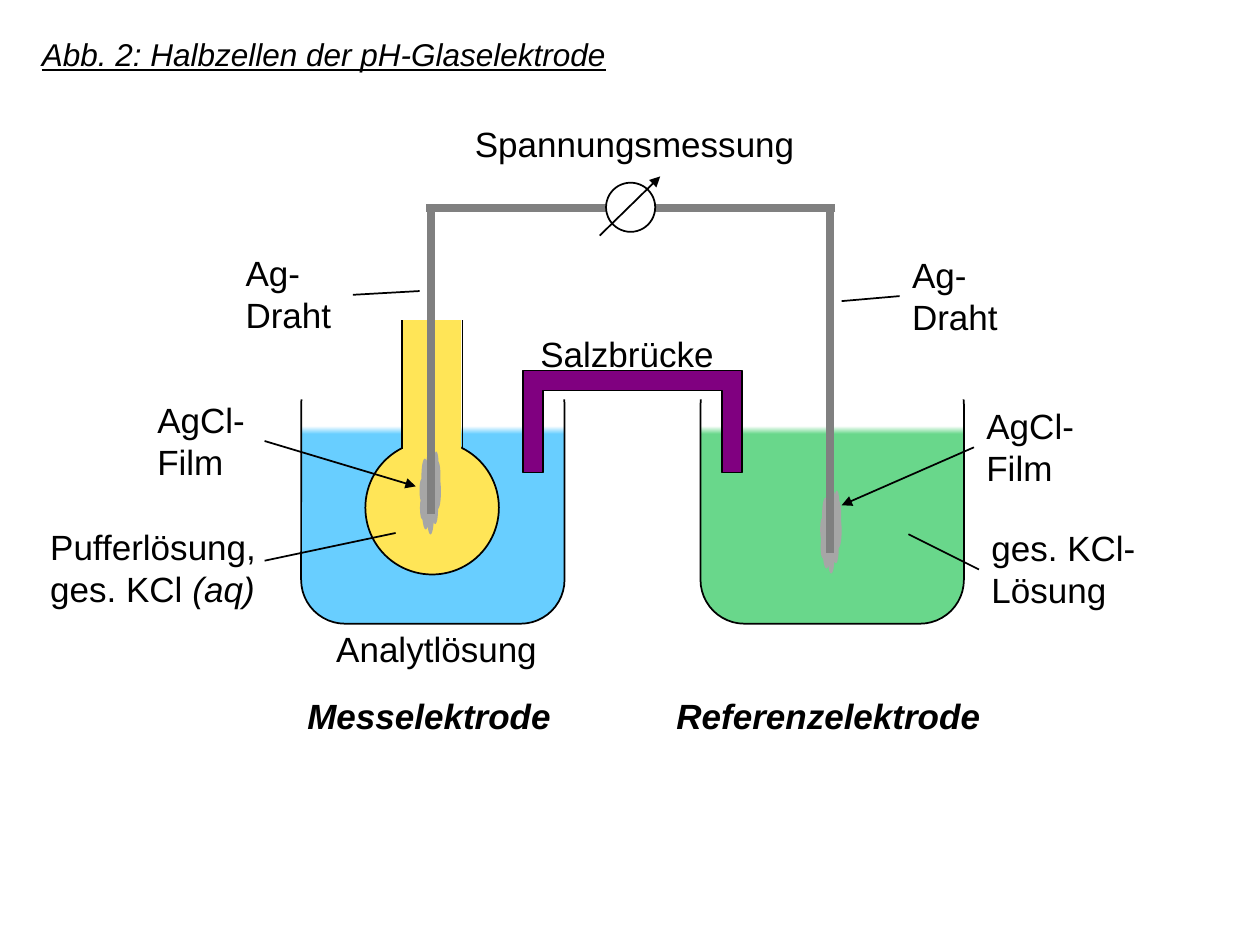
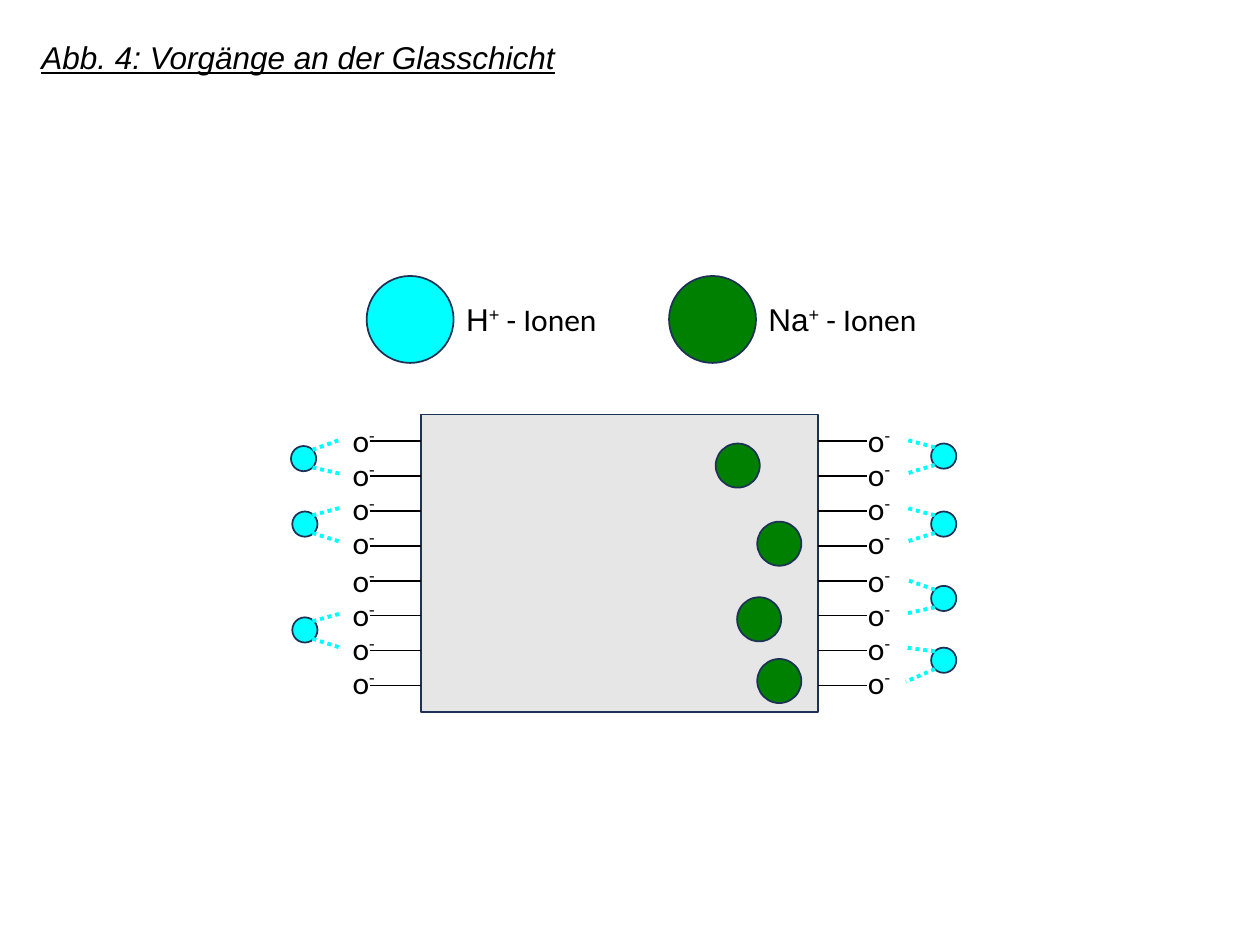
from typing import NamedTuple, Optional

from lxml.etree import SubElement
from pptx import Presentation
from pptx.dml.color import RGBColor
from pptx.enum.dml import MSO_LINE_DASH_STYLE as Dash
from pptx.enum.shapes import MSO_CONNECTOR, MSO_SHAPE as Preset
from pptx.enum.text import MSO_AUTO_SIZE, PP_ALIGN as Align
from pptx.oxml.ns import qn
from pptx.util import Inches, Pt

BLACK, WHITE, GREY = "000000", "FFFFFF", "808080"
NAVY, CYAN, GREEN = "1E3256", "00FFFF", "008000"
YELLOW, PURPLE, FILM = "FFE557", "800080", "A6A6A6"
GLASS = "E7E6E6"


class Box(NamedTuple):
    left: float
    top: float
    width: float
    height: float

    def lengths(self) -> list:
        return [Inches(value) for value in self]


class Run(NamedTuple):
    text: str
    font: str = "Arial"
    bold: bool = False
    italic: bool = False
    underline: bool = False
    superscript: bool = False


class Label(NamedTuple):
    box: Box
    text: str
    bold_italic: bool = False


class Stroke(NamedTuple):
    start: tuple
    end: tuple
    color: str = BLACK
    width: float = 1
    dash: Optional[Dash] = None
    arrow: bool = False


class Beaker(NamedTuple):
    left: float
    solution: str


class Ion(NamedTuple):
    first_row: int
    left: float
    top: float


class GlassSide(NamedTuple):
    bond_left: float
    bond_right: float
    oxygen_left: float
    pull_oxygen: float
    pull_ion: float
    ions: tuple


class Legend(NamedTuple):
    left: float
    color: str
    symbol: str


def rgb(color: str) -> RGBColor:
    return RGBColor.from_string(color)


def paint(shape, fill: Optional[str], line: Optional[str]) -> None:
    shape.shadow.inherit = False
    if fill:
        shape.fill.solid()
        shape.fill.fore_color.rgb = rgb(fill)
    if line:
        shape.line.color.rgb = rgb(line)
        shape.line.width = Pt(1)
    else:
        shape.line.fill.background()


def draw_shape(slide, preset: Preset, box: Box, fill: Optional[str] = None,
               line: Optional[str] = None):
    shape = slide.shapes.add_shape(preset, *box.lengths())
    paint(shape, fill, line)
    return shape


def draw_stroke(slide, stroke: Stroke) -> None:
    ends = [Inches(value) for value in (*stroke.start, *stroke.end)]
    connector = slide.shapes.add_connector(MSO_CONNECTOR.STRAIGHT, *ends)
    connector.line.color.rgb = rgb(stroke.color)
    connector.line.width = Pt(stroke.width)
    if stroke.dash:
        connector.line.dash_style = stroke.dash
    if stroke.arrow:
        SubElement(connector.line._get_or_add_ln(), qn("a:tailEnd"), type="triangle")
    SubElement(connector._element.spPr, qn("a:effectLst"))


def draw_text(slide, box: Box, *paragraphs: list, size: float = 20,
              align: Align = Align.LEFT, space_after: float = 0) -> None:
    frame = slide.shapes.add_textbox(*box.lengths()).text_frame
    frame.word_wrap = True
    frame.auto_size = MSO_AUTO_SIZE.SHAPE_TO_FIT_TEXT
    for index, runs in enumerate(paragraphs):
        paragraph = frame.add_paragraph() if index else frame.paragraphs[0]
        paragraph.alignment = align
        paragraph.space_after = Pt(space_after)
        for part in runs:
            run = paragraph.add_run()
            run.text = part.text
            run.font.name, run.font.size = part.font, Pt(size)
            run.font.bold, run.font.italic = part.bold, part.italic
            run.font.underline = part.underline
            run.font.color.rgb = rgb(BLACK)
            if part.superscript:
                run._r.get_or_add_rPr().set("baseline", "30000")


def draw_caption(slide, box: Box, caption: str, align: Align) -> None:
    draw_text(slide, box, [Run(caption, italic=True, underline=True)],
              size=18, align=align, space_after=10)


def draw_beaker(slide, beaker: Beaker) -> None:
    glass = draw_shape(slide, Preset.ROUNDED_RECTANGLE,
                       Box(beaker.left, 2.86, 2.09, 2.09), line=BLACK)
    glass.fill.gradient()
    glass.fill.gradient_angle = 90
    levels = ((0.72, beaker.solution), (0.75, WHITE))
    for stop, (position, color) in zip(glass.fill.gradient_stops, levels):
        stop.position = position
        stop.color.rgb = rgb(color)


def draw_salt_bridge(slide, box: Box, thickness: float) -> None:
    left, top, width, height = box
    right, bottom = left + width, top + height
    inner_left, inner_right, inner_top = left + thickness, right - thickness, top + thickness
    outline = [(left, top), (right, top), (right, bottom), (inner_right, bottom),
               (inner_right, inner_top), (inner_left, inner_top),
               (inner_left, bottom), (left, bottom)]
    points = [(Inches(x), Inches(y)) for x, y in outline]
    builder = slide.shapes.build_freeform(*points[0])
    builder.add_line_segments(points[1:], close=True)
    paint(builder.convert_to_shape(), PURPLE, BLACK)


def draw_half_cells(slide) -> None:
    for beaker in (Beaker(5.56, "69D78B"), Beaker(2.39, "68CEFF")):
        draw_beaker(slide, beaker)
    draw_shape(slide, Preset.RECTANGLE, Box(1.89, 2.55, 6.21, 0.62), WHITE)

    draw_shape(slide, Preset.OVAL, Box(2.9, 3.5, 1.06, 1.06), YELLOW, BLACK)
    draw_shape(slide, Preset.RECTANGLE, Box(3.19, 2.54, 0.47, 1.06), YELLOW)
    for neck_wall in (3.67, 3.19):
        draw_stroke(slide, Stroke((neck_wall, 2.54), (neck_wall, 3.56)))

    for wire, wire_end, film_left, film_top in ((3.42, 4.08, 3.33, 3.58),
                                                (6.59, 4.39, 6.51, 3.89)):
        draw_shape(slide, Preset.CLOUD, Box(film_left, film_top, 0.17, 0.66), FILM)
        draw_stroke(slide, Stroke((wire, 1.65), (wire, wire_end), GREY, 4.5))

    draw_salt_bridge(slide, Box(4.15, 2.94, 1.74, 0.81), 0.16)
    draw_stroke(slide, Stroke((6.63, 1.65), (3.38, 1.65), GREY, 4.5))
    draw_shape(slide, Preset.OVAL, Box(4.81, 1.45, 0.39, 0.39), WHITE, BLACK)

    pointers = (
        Stroke((4.76, 1.87), (5.24, 1.4), arrow=True),
        Stroke((2.8, 2.34), (3.33, 2.31)),
        Stroke((7.14, 2.35), (6.68, 2.39)),
        Stroke((2.1, 3.5), (3.3, 3.86), arrow=True),
        Stroke((7.73, 3.55), (6.68, 4.01), arrow=True),
        Stroke((2.1, 4.45), (3.14, 4.23)),
        Stroke((7.21, 4.24), (7.77, 4.52)),
    )
    for pointer in pointers:
        draw_stroke(slide, pointer)

    labels = (
        Label(Box(1.85, 1.95, 0.95, 0.77), "Ag-Draht"),
        Label(Box(7.14, 1.96, 1.26, 0.77), "Ag-Draht"),
        Label(Box(3.67, 0.92, 2.77, 0.44), "Spannungsmessung"),
        Label(Box(4.19, 2.59, 1.64, 0.44), "Salzbrücke"),
        Label(Box(1.15, 3.11, 0.95, 0.77), "AgCl-Film"),
        Label(Box(7.73, 3.16, 1.28, 0.77), "AgCl-Film"),
        Label(Box(7.77, 4.13, 2.06, 0.77), "ges. KCl-Lösung"),
        Label(Box(2.57, 4.93, 1.86, 0.44), "Analytlösung"),
        Label(Box(2.34, 5.46, 2.15, 0.44), "Messelektrode", True),
        Label(Box(5.27, 5.46, 2.67, 0.44), "Referenzelektrode", True),
    )
    for label in labels:
        draw_text(slide, label.box, [Run(label.text, bold=label.bold_italic,
                                         italic=label.bold_italic)])
    draw_text(slide, Box(0.3, 4.12, 2.07, 0.77), [Run("Pufferlösung,")],
              [Run("ges. KCl "), Run("(aq)", italic=True)])
    draw_caption(slide, Box(0.07, 0.23, 5, 0.4),
                 "Abb. 2: Halbzellen der pH-Glaselektrode", Align.CENTER)


def oxygen_top(row: int) -> float:
    return 3.29 + 0.27 * row + (0.03 if row > 3 else 0)


def draw_glass_side(slide, side: GlassSide) -> None:
    for row in range(8):
        bond = 3.5 + 1.94 / 7 * row
        draw_stroke(slide, Stroke((side.bond_left, bond), (side.bond_right, bond)))
        draw_text(slide, Box(side.oxygen_left, oxygen_top(row), 0.39, 0.4),
                  [Run("o", "Calibri"), Run("-", "Calibri", superscript=True)], size=18)
    for ion in side.ions:
        draw_shape(slide, Preset.OVAL, Box(ion.left, ion.top, 0.2, 0.2), CYAN, NAVY)
        for offset, ion_edge in enumerate((0.03, 0.17)):
            oxygen = oxygen_top(ion.first_row + offset) + 0.2
            draw_stroke(slide, Stroke((side.pull_ion, ion.top + ion_edge),
                                      (side.pull_oxygen, oxygen),
                                      CYAN, 2.25, Dash.ROUND_DOT))


def draw_glass_layer(slide) -> None:
    draw_shape(slide, Preset.RECTANGLE, Box(3.34, 3.29, 3.15, 2.36), GLASS, NAVY)
    sides = (
        GlassSide(6.49, 6.88, 6.79, 7.19, 7.42,
                  (Ion(0, 7.39, 3.52), Ion(2, 7.39, 4.06),
                   Ion(4, 7.39, 4.65), Ion(6, 7.39, 5.14))),
        GlassSide(2.94, 3.34, 2.7, 2.7, 2.48,
                  (Ion(0, 2.31, 3.54), Ion(2, 2.32, 4.06), Ion(5, 2.32, 4.9))),
    )
    for side in sides:
        draw_glass_side(slide, side)

    for sodium_left, sodium_top in ((5.68, 3.52), (6.01, 4.14), (5.85, 4.74), (6.01, 5.23)):
        draw_shape(slide, Preset.OVAL, Box(sodium_left, sodium_top, 0.35, 0.35), GREEN, NAVY)

    for legend in (Legend(2.91, CYAN, "H"), Legend(5.31, GREEN, "Na")):
        draw_shape(slide, Preset.OVAL, Box(legend.left, 2.19, 0.69, 0.69), legend.color, NAVY)
        draw_text(slide, Box(legend.left + 0.69, 2.33, 1.95, 0.4),
                  [Run(legend.symbol), Run("+", superscript=True),
                   Run(" - Ionen", "Calibri")], size=18)
    draw_caption(slide, Box(0.23, 0.25, 9.5, 0.4),
                 "Abb. 4: Vorgänge an der Glasschicht", Align.JUSTIFY)


def main() -> None:
    deck = Presentation()
    deck.slide_width, deck.slide_height = Inches(10), Inches(7.5)
    blank = deck.slide_layouts[6]
    for draw_figure in (draw_half_cells, draw_glass_layer):
        draw_figure(deck.slides.add_slide(blank))
    deck.save("out.pptx")


if __name__ == "__main__":
    main()
